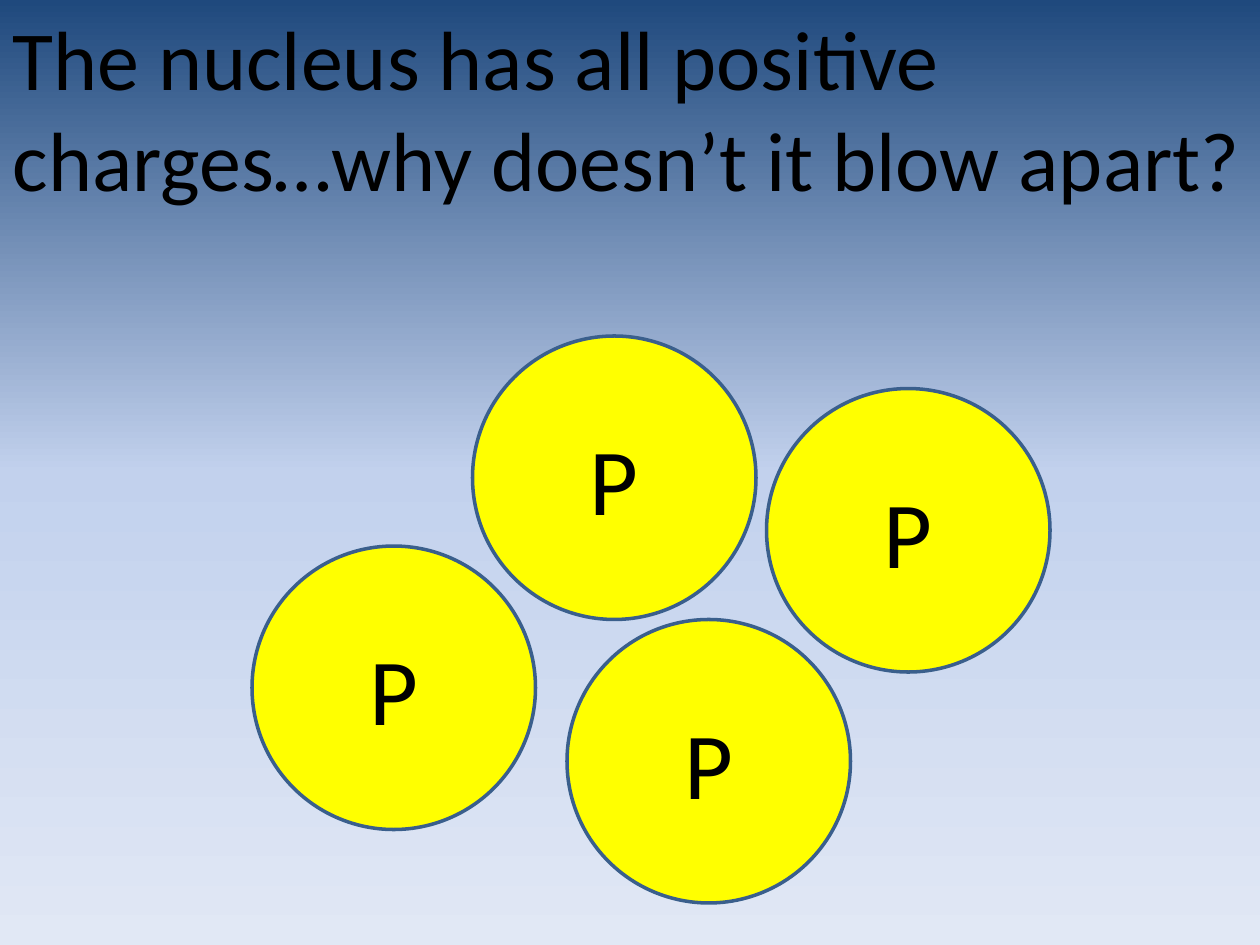
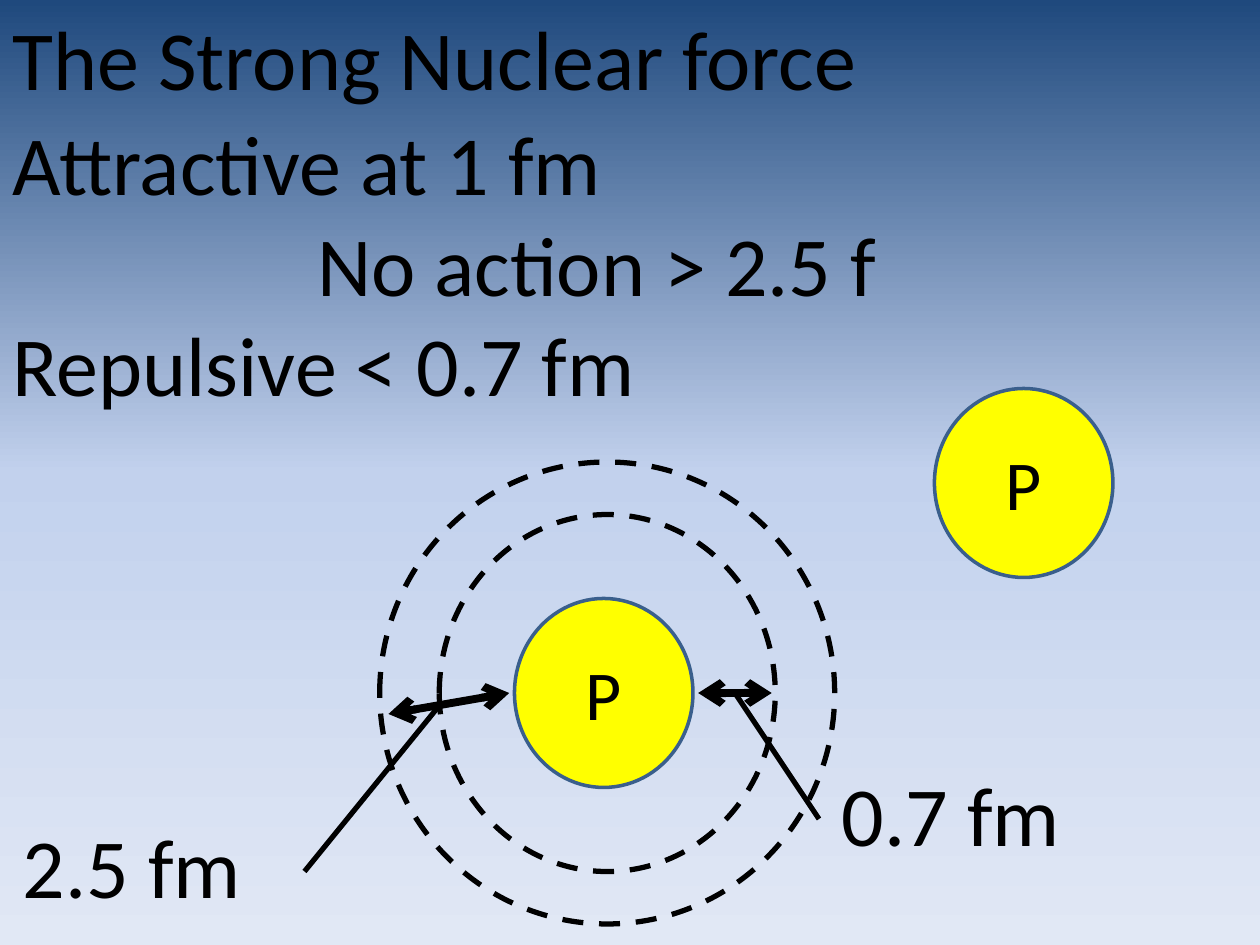
import copy

import pptx
import pptx.dml.color
import pptx.enum.dml
import pptx.enum.shapes
import pptx.enum.text
import pptx.oxml
import pptx.oxml.ns
import pptx.util

Pt = pptx.util.Pt
RGBColor = pptx.dml.color.RGBColor
ALIGN = pptx.enum.text.PP_ALIGN
ANCHOR = pptx.enum.text.MSO_ANCHOR
qn = pptx.oxml.ns.qn

# Shared style
BLACK = RGBColor(0x00, 0x00, 0x00)
PROTON_YELLOW = RGBColor(0xFF, 0xFF, 0x00)
PROTON_EDGE = RGBColor(0x3A, 0x5F, 0x8C)
SKY = [
    (0, RGBColor(0x1F, 0x49, 0x7D)),
    (0.5, RGBColor(0xC2, 0xD1, 0xED)),
    (1, RGBColor(0xE1, 0xE8, 0xF5)),
]
FONT = "Calibri"
TEXT_SIZE = 48
SLIDE_WIDTH, SLIDE_HEIGHT = 720, 540
LINE_HEIGHT = 65.5
TITLE_ONLY, TITLE_AND_BODY = 5, 1


def paint_background(master):
    """Give every slide the vertical sky gradient."""
    fill = master.background.fill
    fill.gradient()
    fill.gradient_angle = 270
    stop_list = master.element.find(".//" + qn("a:gsLst"))
    stop_list.insert(1, copy.deepcopy(stop_list[0]))
    for stop, (position, color) in zip(fill.gradient_stops, SKY):
        stop.position = position
        stop.color.rgb = color


def write_text(shape, text, size=TEXT_SIZE, align=ALIGN.LEFT, anchor=ANCHOR.TOP):
    """Write one paragraph per line of text."""
    frame = shape.text_frame
    frame.word_wrap = True
    frame.auto_size = pptx.enum.text.MSO_AUTO_SIZE.NONE
    frame.vertical_anchor = anchor
    frame.text = text
    for paragraph in frame.paragraphs:
        paragraph.alignment = align
        paragraph.space_before = Pt(0)
        paragraph.font.name = FONT
        paragraph.font.size = Pt(size)
        paragraph.font.color.rgb = BLACK


def place(shape, left, top, width, height):
    shape.left, shape.top = Pt(left), Pt(top)
    shape.width, shape.height = Pt(width), Pt(height)


def add_titled_slide(presentation, layout_index, title, height=LINE_HEIGHT):
    slide = presentation.slides.add_slide(presentation.slide_layouts[layout_index])
    place(slide.shapes.title, 0, 0, SLIDE_WIDTH, height)
    write_text(slide.shapes.title, title)
    return slide


def fill_body(slide, lines, top, height, indents):
    """Fill the body with unbulleted lines, each with its own indent."""
    body = slide.placeholders[1]
    place(body, 0, top, SLIDE_WIDTH, height)
    write_text(body, "\n".join(lines))
    for paragraph, indent in zip(body.text_frame.paragraphs, indents):
        properties = paragraph._p.get_or_add_pPr()
        properties.set("marL", str(Pt(indent)))
        properties.set("indent", "0")
        # Bullet settings come before the default run properties
        bullet = pptx.oxml.parse_xml(f'<a:buNone {pptx.oxml.ns.nsdecls("a")}/>')
        properties.insert_element_before(bullet, "a:tabLst", "a:defRPr", "a:extLst")


def add_label(slide, text, left, top):
    label = slide.shapes.add_textbox(Pt(left), Pt(top), Pt(180), Pt(LINE_HEIGHT))
    write_text(label, text)


def add_ellipse(slide, left, top, width, height, line_color, line_width):
    ellipse = slide.shapes.add_shape(
        pptx.enum.shapes.MSO_SHAPE.OVAL, Pt(left), Pt(top), Pt(width), Pt(height))
    ellipse.shadow.inherit = False
    ellipse.line.color.rgb = line_color
    ellipse.line.width = Pt(line_width)
    return ellipse


def add_proton(slide, left, top, width, height, size):
    proton = add_ellipse(slide, left, top, width, height, PROTON_EDGE, 2)
    proton.fill.solid()
    proton.fill.fore_color.rgb = PROTON_YELLOW
    write_text(proton, "P", size=size, align=ALIGN.CENTER, anchor=ANCHOR.MIDDLE)


def add_range_ring(slide, left, top, width, height):
    ring = add_ellipse(slide, left, top, width, height, BLACK, 3)
    ring.fill.background()
    ring.line.dash_style = pptx.enum.dml.MSO_LINE.DASH


def add_line(slide, start, end, width=3, arrows=False):
    connector = slide.shapes.add_connector(
        pptx.enum.shapes.MSO_CONNECTOR.STRAIGHT, *map(Pt, start + end))
    connector.line.color.rgb = BLACK
    connector.line.width = Pt(width)
    if arrows:
        line = connector.line._get_or_add_ln()
        for tag in ("a:headEnd", "a:tailEnd"):
            line.makeelement(qn(tag), {"type": "arrow"})
            line.append(line.makeelement(qn(tag), {"type": "arrow"}))
    properties = connector._element.spPr
    properties.append(properties.makeelement(qn("a:effectLst"), {}))


def build_nucleus_slide(presentation):
    slide = add_titled_slide(
        presentation, TITLE_ONLY,
        "The nucleus has all positive charges…why doesn’t it blow apart?", height=181)
    for left, top in [(144, 312), (270, 192), (324, 354), (438, 222)]:
        add_proton(slide, left, top, 162, 162, size=54)


def build_strong_force_slide(presentation):
    slide = add_titled_slide(presentation, TITLE_AND_BODY, "The Strong Nuclear force")
    fill_body(
        slide, ["Attractive at 1 fm", "No action > 2.5 f", "Repulsive < 0.7 fm"],
        top=60, height=181, indents=[0, 174, 0])

    # Protons and the inner range
    add_proton(slide, 294, 342, 102, 108, size=40)
    add_range_ring(slide, 251, 294, 192, 204)
    add_proton(slide, 534, 222, 102, 108, size=40)
    add_line(slide, (399, 396), (441, 396), width=4.5, arrows=True)
    add_line(slide, (420, 396), (468, 468))
    add_label(slide, "0.7 fm", 474, 432)

    # Outer range
    add_range_ring(slide, 217, 264, 260, 264)
    add_line(slide, (222, 408), (291, 396), width=4.5, arrows=True)
    add_line(slide, (252, 402), (174, 498))
    add_label(slide, "2.5 fm", 6, 462)


def main():
    presentation = pptx.Presentation()
    presentation.slide_width = Pt(SLIDE_WIDTH)
    presentation.slide_height = Pt(SLIDE_HEIGHT)
    paint_background(presentation.slide_master)
    build_nucleus_slide(presentation)
    build_strong_force_slide(presentation)
    presentation.save("out.pptx")


if __name__ == "__main__":
    main()
